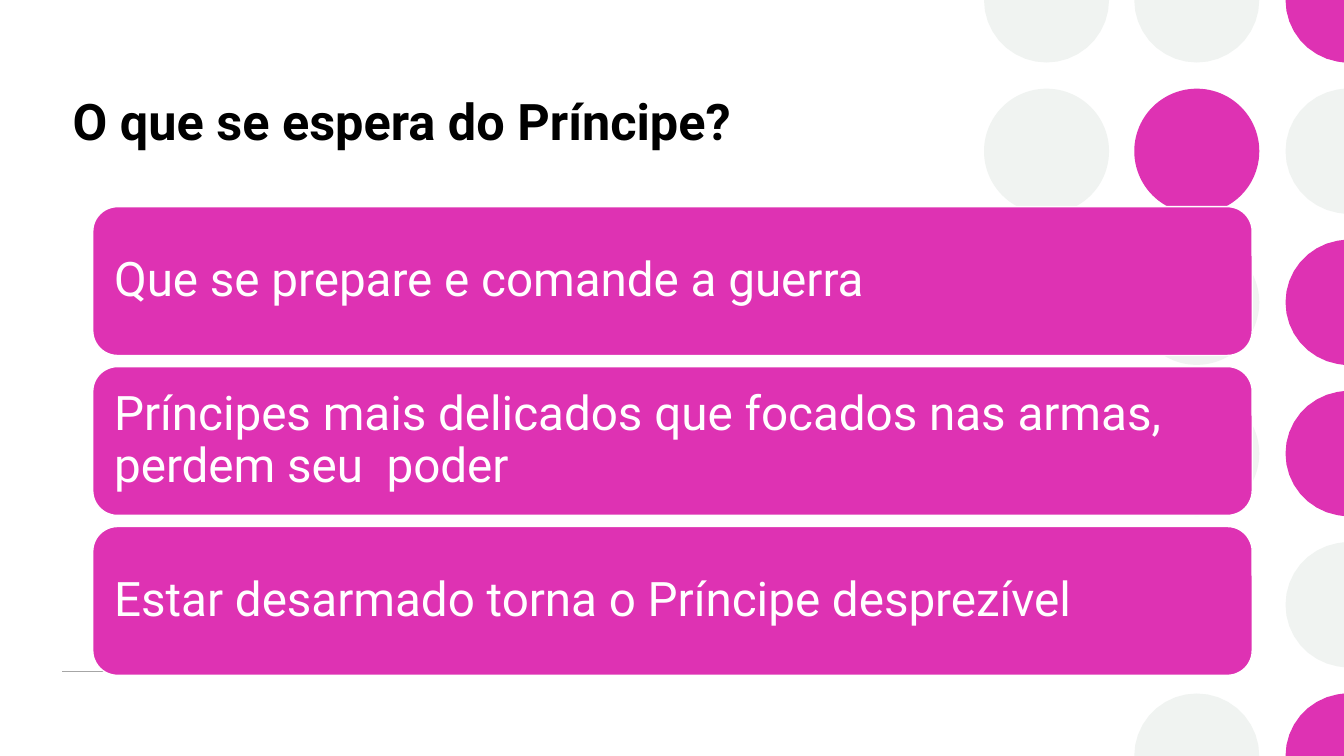
from dataclasses import dataclass
from math import cos, radians, sin

from lxml.etree import SubElement
from pptx import Presentation
from pptx.dml.color import RGBColor
from pptx.enum.shapes import MSO_CONNECTOR, MSO_SHAPE
from pptx.enum.text import MSO_ANCHOR as Anchor, MSO_AUTO_SIZE as AutoSize, PP_ALIGN as Align
from pptx.oxml.ns import qn
from pptx.util import Inches, Pt


@dataclass(frozen=True)
class Theme:
    """Colours, font and type sizes of the slide."""
    accent: RGBColor = RGBColor(0xDE, 0x32, 0xB3)
    pale: RGBColor = RGBColor(0xF0, 0xF3, 0xF1)
    rule: RGBColor = RGBColor(0xA6, 0xA6, 0xA6)
    white: RGBColor = RGBColor(0xFF, 0xFF, 0xFF)
    black: RGBColor = RGBColor(0, 0, 0)
    font: str = "Roboto"
    title_size: int = Pt(36)
    card_size: int = Pt(34)


THEME = Theme()
WIDTH, HEIGHT = 13.33, 7.5
RADIUS, ROW_PITCH, ARC_STEP = 0.62, 1.5, 10
CIRCLE_COLUMNS = {9.76: "pp", 11.25: "pappxp", 12.75: "apaapa"}
EXPECTATIONS = (
    "Que se prepare e comande a guerra",
    "Príncipes mais delicados que focados nas armas, perdem seu  poder",
    "Estar desarmado torna o Príncipe desprezível",
)


def apply_format(target, values):
    """Set each named attribute of the target."""
    for name, value in values.items():
        setattr(target, name, value)


def write_text(shape, text, frame_format, paragraph_format, size, colour, bold=False):
    """Write one formatted paragraph into a shape."""
    frame = shape.text_frame
    frame.text = text
    paragraph = frame.paragraphs[0]
    apply_format(frame, {"word_wrap": True, "auto_size": AutoSize.NONE, **frame_format})
    apply_format(paragraph, {"alignment": Align.LEFT, **paragraph_format})
    font = paragraph.runs[0].font
    apply_format(font, {"name": THEME.font, "size": size, "bold": bold})
    font.color.rgb = colour


def add_cut_circle(slide, center_x, center_y):
    """Add the part of a circle that lies inside the slide edges."""
    begin, end = (90, 270) if center_x + RADIUS > WIDTH else (0, 360)
    if center_y < RADIUS:
        end = 180
    elif center_y + RADIUS > HEIGHT:
        begin = 180
    arc = [(Inches(min(center_x + RADIUS * cos(radians(angle)), WIDTH)),
            Inches(center_y + RADIUS * sin(radians(angle))))
           for angle in range(begin, end + 1, ARC_STEP)]
    builder = slide.shapes.build_freeform(Inches(min(center_x, WIDTH)), Inches(center_y))
    builder.add_line_segments(arc, close=True)
    return builder.convert_to_shape()


def add_circle(slide, left, center_y, colour):
    """Add a whole circle, or its visible part at the slide edge."""
    top, diameter = center_y - RADIUS, 2 * RADIUS
    if top >= 0 and top + diameter <= HEIGHT and left + diameter <= WIDTH:
        circle = slide.shapes.add_shape(
            MSO_SHAPE.OVAL, Inches(left), Inches(top), Inches(diameter), Inches(diameter))
    else:
        circle = add_cut_circle(slide, left + RADIUS, center_y)
    circle.shadow.inherit = False
    circle.fill.solid()
    circle.fill.fore_color.rgb = colour
    circle.line.fill.background()


def add_circle_grid(slide, columns):
    """Fill the right side with columns of accent and pale circles."""
    colours = {"a": THEME.accent, "p": THEME.pale}
    for left, pattern in columns.items():
        for row, code in enumerate(pattern):
            if code in colours:
                add_circle(slide, left, row * ROW_PITCH, colours[code])


def add_rule(slide, left, top, width):
    """Draw the thin footer rule."""
    rule = slide.shapes.add_connector(
        MSO_CONNECTOR.STRAIGHT, Inches(left), Inches(top), Inches(left + width), Inches(top))
    rule.line.color.rgb = THEME.rule
    rule.line.width = Pt(1)
    SubElement(rule.element.spPr, qn("a:effectLst"))


def add_title(slide, text, left, top, width, height):
    """Place and format the title placeholder."""
    title = slide.shapes.title
    apply_format(title, {"left": Inches(left), "top": Inches(top),
                         "width": Inches(width), "height": Inches(height)})
    write_text(title, text, {"vertical_anchor": Anchor.TOP}, {},
               THEME.title_size, THEME.black, bold=True)


def add_cards(slide, texts, left, top, width, height, gap):
    """Stack equal rounded cards inside the given box."""
    card_height = (height - gap * (len(texts) - 1)) / len(texts)
    margins = {f"margin_{side}": Inches(0.14) for side in ("left", "top", "right", "bottom")}
    for index, text in enumerate(texts):
        card = slide.shapes.add_shape(
            MSO_SHAPE.ROUNDED_RECTANGLE, Inches(left),
            Inches(top + index * (card_height + gap)), Inches(width), Inches(card_height))
        card.shadow.inherit = False
        card.fill.solid()
        card.fill.fore_color.rgb = THEME.accent
        card.line.color.rgb = THEME.white
        card.line.width = Pt(1)
        write_text(card, text, {"vertical_anchor": Anchor.MIDDLE, **margins},
                   {"line_spacing": 0.9}, THEME.card_size, THEME.white)


def main():
    """Build and save the presentation."""
    presentation = Presentation()
    apply_format(presentation, {"slide_width": Inches(WIDTH), "slide_height": Inches(HEIGHT)})
    slide = presentation.slides.add_slide(presentation.slide_layouts[5])
    add_circle_grid(slide, CIRCLE_COLUMNS)
    add_rule(slide, 0.62, 6.66, 8.02)
    add_title(slide, "O que se espera do Príncipe?", 0.62, 0.84, 8.02, 1.39)
    add_cards(slide, EXPECTATIONS, 0.92, 2.05, 11.5, 4.65, 0.11)
    presentation.save("out.pptx")


if __name__ == "__main__":
    main()
